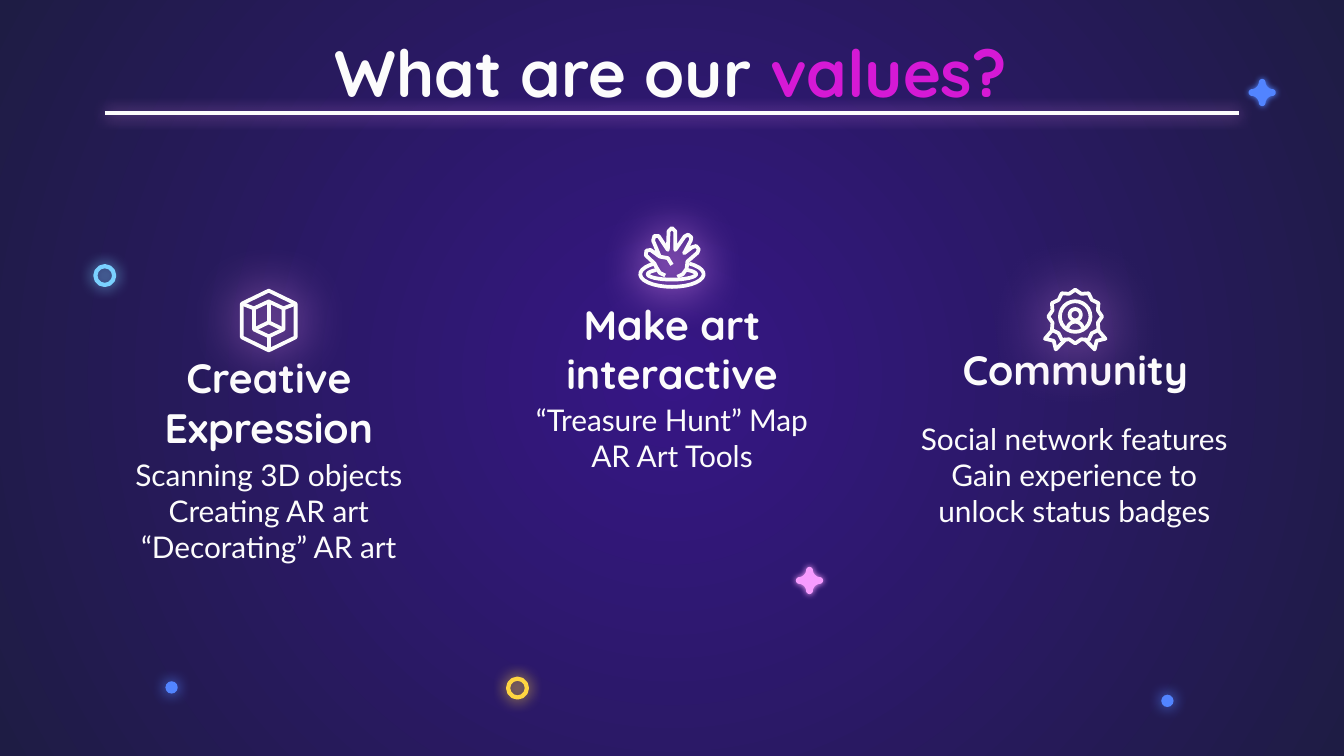
from math import cos, radians, sin

from lxml import etree
from pptx import Presentation
from pptx.dml.color import RGBColor
from pptx.enum import shapes as kinds, text as styles
from pptx.oxml import parse_xml
from pptx.oxml.ns import nsdecls, qn
from pptx.util import Pt

WHITE, PINK, BLUE = "FCFCFC", "F79BFF", "5284FF"
rgb = RGBColor.from_string


def glow(shape, color, blur, drop=0, alpha=100):
    """Append a soft outer shadow; call after fill and line are set."""
    shape._element.spPr.append(parse_xml(
        f'<a:effectLst {nsdecls("a")}><a:outerShdw blurRad="{Pt(blur)}" '
        f'dist="{Pt(drop)}" dir="5400000" algn="bl" rotWithShape="0">'
        f'<a:srgbClr val="{color}"><a:alpha val="{alpha * 1000}"/></a:srgbClr>'
        '</a:outerShdw></a:effectLst>'))


def arc(x, y, rx, ry, start, end):
    """Points along an elliptic arc, angles clockwise from the right."""
    turns = [radians(start + (end - start) * i / 24) for i in range(25)]
    return [(x + rx * cos(t), y + ry * sin(t)) for t in turns]


prs = Presentation()
prs.slide_width, prs.slide_height = Pt(720), Pt(405)
slide = prs.slides.add_slide(prs.slide_layouts[5])
items = slide.shapes

# Background: radial gradient from the centre
fill = slide.background.fill
fill.gradient()
for stop, (pos, color) in zip(fill.gradient_stops, [(0, "361685"), (1, "1E1C44")]):
    stop.position = pos
    stop.color.rgb = rgb(color)
grad = slide._element.find(".//" + qn("a:gradFill"))
grad.remove(grad.find(qn("a:lin")))
path = etree.SubElement(grad, qn("a:path"), path="circle")
etree.SubElement(path, qn("a:fillToRect"), l="50000", t="50000", r="50000", b="50000")

# Rings and dots: left, top, size, colour, filled
for x, y, size, color, solid in [
    (51.1, 142.6, 10.1, "7AD1FF", False),
    (272.2, 363.6, 10.1, "FFD541", False),
    (622.1, 372.2, 6.6, BLUE, True),
    (88.6, 365, 6.6, BLUE, True),
]:
    dot = items.add_shape(kinds.MSO_SHAPE.OVAL, Pt(x), Pt(y), Pt(size), Pt(size))
    if solid:
        dot.fill.solid()
        dot.fill.fore_color.rgb = rgb(color)
        dot.line.fill.background()
    else:
        dot.fill.background()
        dot.line.color.rgb = rgb(color)
        dot.line.width = Pt(2.25)
    glow(dot, color, 7.9)

# Title and its rule
title = items.title
title.left, title.top, title.width, title.height = Pt(95), Pt(10), Pt(529), Pt(45.5)
para = title.text_frame.paragraphs[0]
for words, color in [("What are our ", WHITE), ("values?", "D519D5")]:
    run = para.add_run()
    run.text = words
    run.font.color.rgb = rgb(color)
rule = items.add_connector(kinds.MSO_CONNECTOR.STRAIGHT, Pt(56.2), Pt(60.5), Pt(663.8), Pt(60.5))
rule.line.color.rgb = rgb(WHITE)
rule.line.width = Pt(2.25)
glow(rule, PINK, 7.9, alpha=68)

# Text boxes: shape, size, font, bold, anchor
top, low = styles.MSO_ANCHOR.TOP, styles.MSO_ANCHOR.BOTTOM
boxes = [(title, 35, "Quicksand", True, top)]
columns = [
    ("Creative Expression", 56.2, 217.4, 56.2, 237.6, 175.7,
     ["Scanning 3D objects", "Creating AR art", "“Decorating” AR art"]),
    ("Make art interactive", 272.2, 188.6, 272.2, 208.1, 175.7,
     ["“Treasure Hunt” Map", "AR Art Tools"]),
    ("Community", 488.2, 186.5, 479.5, 218.2, 192.2,
     ["Social network features", "Gain experience to unlock status badges"]),
]
for head, hx, hy, bx, by, wide, lines in columns:
    body = items.add_textbox(Pt(bx), Pt(by), Pt(wide), Pt(71.3))
    body.text_frame.text = "\n".join(lines)
    name = items.add_textbox(Pt(hx), Pt(hy), Pt(175.7), Pt(31.7))
    name.text_frame.text = head
    boxes += [(body, 16, "Lato", False, top), (name, 22, "Quicksand", True, low)]

for box, size, face, bold, anchor in boxes:
    frame = box.text_frame
    look = dict(word_wrap=True, auto_size=styles.MSO_AUTO_SIZE.NONE, vertical_anchor=anchor)
    look.update({f"margin_{side}": Pt(7.2) for side in ("left", "top", "right", "bottom")})
    for key, value in look.items():
        setattr(frame, key, value)
    for para in frame.paragraphs:
        para.alignment = styles.PP_ALIGN.CENTER
        for run in para.runs:
            for key, value in dict(size=Pt(size), name=face, bold=bold).items():
                setattr(run.font, key, value)
            if box is not title:
                run.font.color.rgb = rgb(WHITE)

# Sparkle: four round tips joined by hollow arcs
spark = []
for turn in range(0, 360, 90):
    c, s = cos(radians(turn)), sin(radians(turn))
    arm = arc(5.5, 0, 1.75, 1.75, -90, 90) + arc(6, 6, 4.25, 4.25, 270, 180)
    spark += [(x * c - y * s, x * s + y * c) for x, y in arm]

# Icons as lists of (points, closed), in points from the icon's centre
cube = [
    ([(0, -16), (14.4, -9), (14.4, 9), (0, 16), (-14.4, 9), (-14.4, -9)], True),
    ([(0, -10.2), (7.9, -6.5), (7.9, 4.8), (0, 8.5), (-7.9, 4.8), (-7.9, -6.5)], True),
    ([(-7.9, 4.8), (0, 1), (7.9, 4.8)], False),
    ([(0, 1), (0, -10.2)], False),
    ([(0, 8.5), (0, 16)], False),
    ([(-7.9, -6.5), (-14.4, -9)], False),
    ([(7.9, -6.5), (14.4, -9)], False),
]
hand = [
    ([(-3.6, 9.7), (-6.5, 8.3), (-8.3, 5.4), (-9.4, 3.2), (-14, -1.1), (-13.7, -3.6),
      (-11.5, -4), (-6.5, -0.4), (-10.1, -9), (-9.4, -11.5), (-7.2, -11.5), (-2.2, -4),
      (-1.8, -14), (0, -15.8), (1.8, -14), (1.8, -4), (6.8, -11.2), (8.6, -12.2),
      (10.4, -10.8), (10.1, -9), (6.5, -2.2), (10.8, -5.4), (13, -6.1), (14.4, -4.3),
      (13.7, -2.5), (8.3, 2.2), (7.9, 6.1), (5.8, 9), (2.9, 10.4)], False),
    ([(-6.5, -0.4), (-2.2, 0.4), (0, 4)], False),
    (arc(0, 9, 17, 6.8, -57, 237), False),
    (arc(0, 9, 13, 2.9, -50, 230), False),
]
edge = [(r * sin(radians(15 * i)), -r * cos(radians(15 * i)))
        for i, r in enumerate([14.4, 12.6] * 12)]
tail = [(12.2, 7.2), (16.2, 11.9), (11.5, 13), (10.4, 17.6), (5, 12)]
badge = [
    (edge, True),
    (tail, False),
    ([(-x, y) for x, y in tail], False),
    (arc(0, 0, 8.2, 8.2, 0, 360), True),
    (arc(0, -1, 3, 3, 0, 360), True),
    (arc(0, 7, 4.2, 4.2, 190, 350), False),
]

# Outlines: centre, parts, colour, filled, blur, drop
for x, y, parts, color, solid, blur, drop in [
    (676.2, 49.6, [(spark, True)], BLUE, True, 3.4, 0),
    (433.7, 311, [(spark, True)], PINK, True, 3.4, 0),
    (576, 169.6, badge, WHITE, False, 34.9, 1.5),
    (144, 171.7, cube, WHITE, False, 29.2, 0),
    (360, 137.9, hand, WHITE, False, 23.6, 1.5),
]:
    pen = None
    for dots, closed in parts:
        ends = [(Pt(a), Pt(b)) for a, b in dots]
        if pen is None:
            pen = items.build_freeform(*ends[0], scale=1.0)
        else:
            pen.move_to(*ends[0])
        pen.add_line_segments(ends[1:], close=closed)
    form = pen.convert_to_shape(Pt(x), Pt(y))
    if solid:
        form.fill.solid()
        form.fill.fore_color.rgb = rgb(color)
        form.line.fill.background()
    else:
        form.fill.background()
        form.line.color.rgb = rgb(color)
        form.line.width = Pt(2)
    glow(form, color if solid else PINK, blur, drop)

prs.save("out.pptx")
